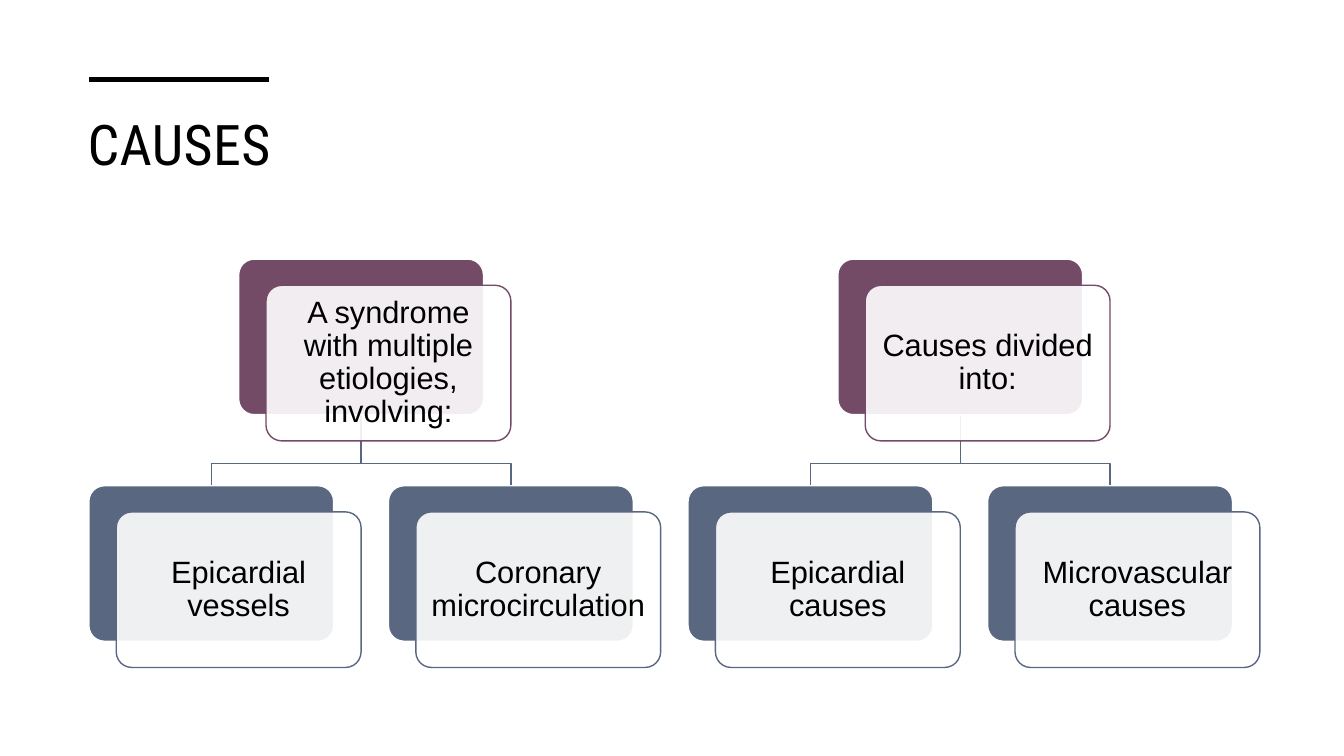
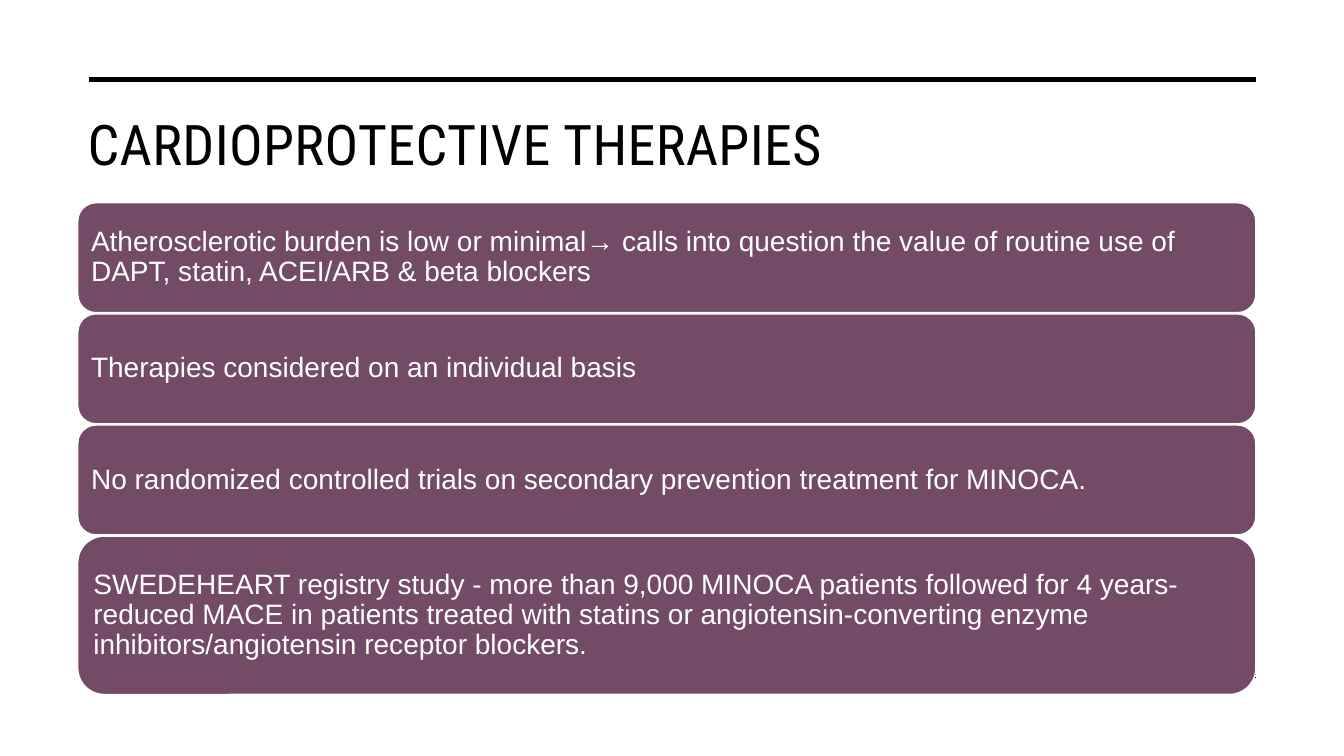
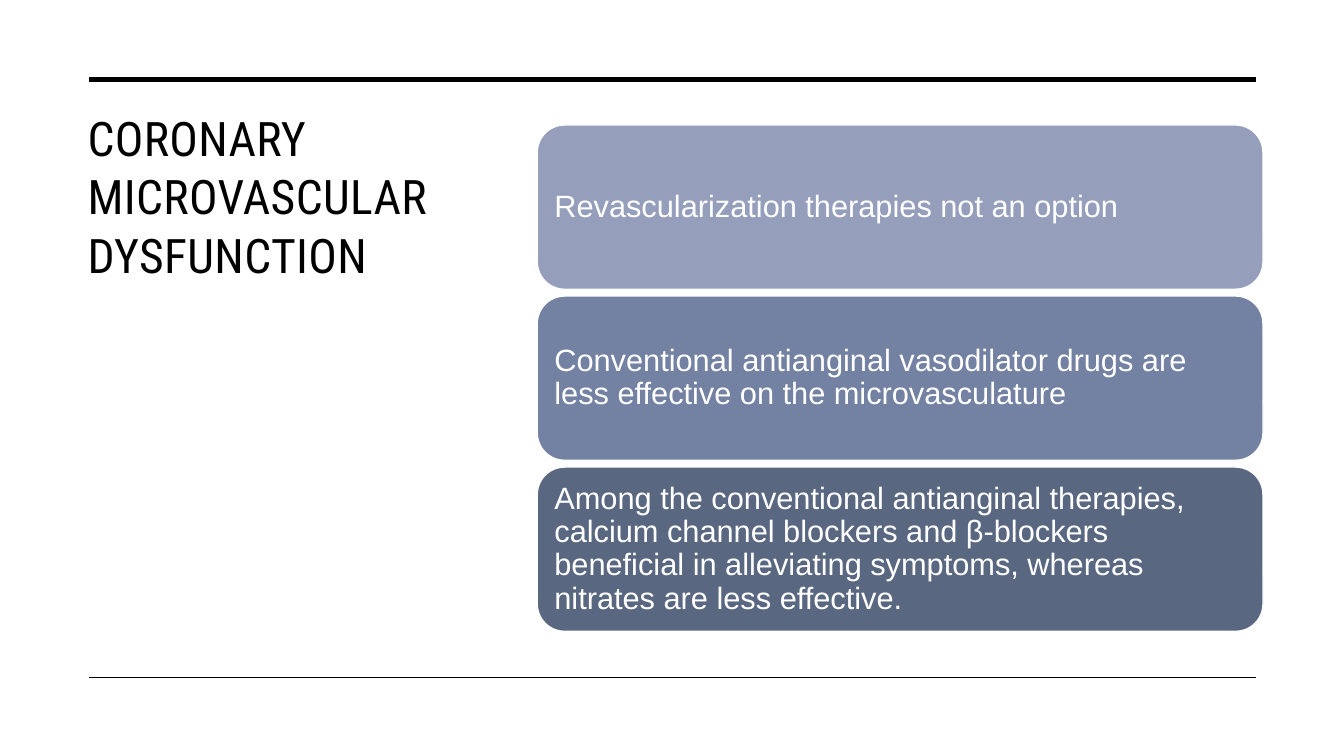
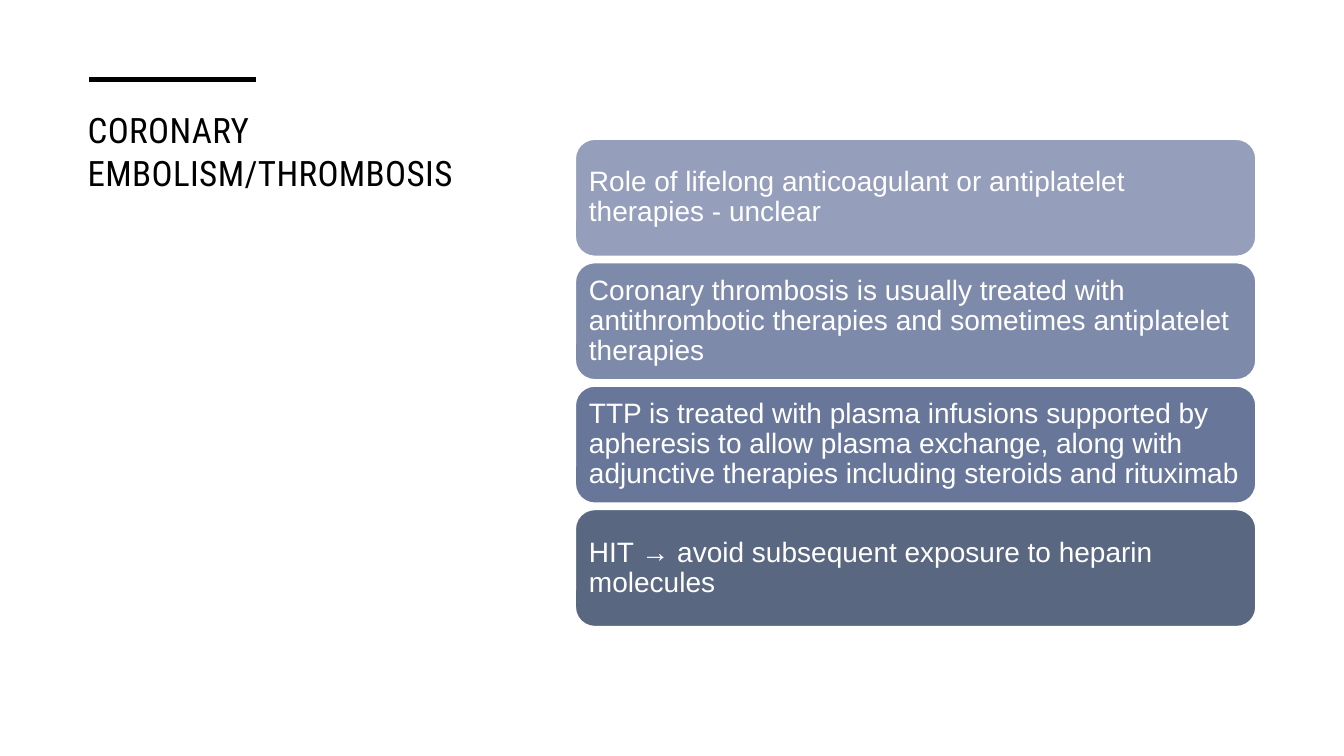
"""Build four slides on causes and therapies of MINOCA."""
from dataclasses import dataclass
from lxml import etree
from pptx import Presentation
from pptx import util as u
from pptx.dml.color import RGBColor
from pptx.enum import shapes, text
from pptx.oxml.ns import qn


@dataclass(frozen=True)
class Theme:
    ink: str = "000000"
    paper: str = "FFFFFF"
    plum: str = "734B67"
    slate: str = "596781"
    mist: str = "959EBB"
    steel: str = "7381A2"
    haze: str = "7E8AAA"
    dusk: str = "687799"
    head: str = "Roboto Condensed"
    body: str = "Arial"
    large: int = 22
    small: int = 20
    thick: float = 3.5
    thin: float = 1


T = Theme()


def write(frame, words, font, size, tone, inset, space):
    frame.word_wrap = True
    frame.margin_left = frame.margin_right = u.Cm(inset)
    frame.margin_top = frame.margin_bottom = u.Cm(inset)
    para = frame.paragraphs[0]
    para.alignment = text.PP_ALIGN.LEFT
    para.line_spacing = space
    run = para.add_run()
    run.text = words
    run.font.name = font
    run.font.size = u.Pt(size)
    run.font.color.rgb = RGBColor.from_string(tone)
    return para, run


def block(slide, left, top, wide, high, fill, edge):
    box = slide.shapes.add_shape(shapes.MSO_SHAPE.ROUNDED_RECTANGLE,
                                 u.Cm(left), u.Cm(top), u.Cm(wide), u.Cm(high))
    box.shadow.inherit = False
    box.fill.solid()
    box.fill.fore_color.rgb = RGBColor.from_string(fill)
    box.line.color.rgb = RGBColor.from_string(edge)
    box.line.width = u.Pt(T.thin)
    box.text_frame.vertical_anchor = text.MSO_ANCHOR.MIDDLE
    return box


deck = Presentation()
deck.slide_width, deck.slide_height = u.Cm(33.87), u.Cm(19.05)

edge, full = 2.24, 31.65
upper, lower = 2.01, 17.07
heads = [
    ("CAUSES", 40, 30, 6.78, False),
    ("CARDIOPROTECTIVE THERAPIES", 40, 29.69, full, True),
    ("CORONARY MICROVASCULAR DYSFUNCTION", 34, 10.16, full, True),
    ("CORONARY EMBOLISM/THROMBOSIS", 25, 10.87, 6.45, False),
]
for title, size, wide, end, foot in heads:
    slide = deck.slides.add_slide(deck.slide_layouts[6])
    rules = [(upper, end, T.thick)]
    if foot:
        rules.append((lower, full, T.thin))
    for y, stop, weight in rules:
        rule = slide.shapes.add_connector(shapes.MSO_CONNECTOR.STRAIGHT,
                                          u.Cm(edge), u.Cm(y), u.Cm(stop), u.Cm(y))
        rule.line.color.rgb = RGBColor.from_string(T.ink)
        rule.line.width = u.Pt(weight)
        etree.SubElement(rule.element.spPr, qn("a:effectLst"))
    box = slide.shapes.add_textbox(u.Cm(1.96), u.Cm(2.54), u.Cm(wide), u.Cm(3.6))
    para, run = write(box.text_frame, title, T.head, size, T.ink, 0.18, 1.02)
    box.text_frame.margin_left = box.text_frame.margin_right = u.Cm(0.25)
    run.font._element.set("spc", "30")

causes = deck.slides[0]
wide, high, pitch = 6.17, 3.92, 7.55
root, fork, leaf = 6.53, 11.68, 12.24
trees = [
    ("A syndrome with multiple etiologies, involving:",
     ["Epicardial vessels", "Coronary microcirculation"]),
    ("Causes divided into:",
     ["Epicardial causes", "Microvascular causes"]),
]
cards = []
for i, (parent, kids) in enumerate(trees):
    left = edge + 2 * i * pitch
    mid = left + pitch / 2
    cards.append((parent, mid, root, T.plum))
    for j, kid in enumerate(kids):
        side = left + j * pitch
        cards.append((kid, side, leaf, T.slate))
        stem, drop = mid + wide / 2, side + wide / 2
        path = causes.shapes.build_freeform(u.Cm(stem), u.Cm(root + high))
        path.add_line_segments([(u.Cm(stem), u.Cm(fork)), (u.Cm(drop), u.Cm(fork)),
                                (u.Cm(drop), u.Cm(leaf))], close=False)
        link = path.convert_to_shape()
        link.shadow.inherit = False
        link.fill.background()
        link.line.color.rgb = RGBColor.from_string(T.slate)
        link.line.width = u.Pt(T.thin)

for words, left, top, tone in cards:
    back = block(causes, left, top, wide, high, tone, T.paper)
    front = block(causes, left + 0.69, top + 0.66, wide, high, T.paper, tone)
    back.adjustments[0] = front.adjustments[0] = 0.1
    color = front.element.spPr.find(qn("a:solidFill"))[0]
    etree.SubElement(color, qn("a:alpha"), val="90000")
    para, run = write(front.text_frame, words, T.body, T.large, T.ink, 0.23, 0.9)
    para.alignment = text.PP_ALIGN.CENTER

stacks = [
    (1, 1.96, 5.11, 29.69, 0.03, T.small, 0.2, [
        (2.77, T.plum, "Atherosclerotic burden is low or minimal→ calls into question "
         "the value of routine use of DAPT, statin, ACEI/ARB & beta blockers"),
        (2.77, T.plum, "Therapies considered on an individual basis"),
        (2.77, T.plum, "No randomized controlled trials on secondary prevention "
         "treatment for MINOCA."),
        (3.99, T.plum, "SWEDEHEART registry study - more than 9,000 MINOCA patients "
         "followed for 4 years- reduced MACE in patients treated with statins or "
         "angiotensin-converting enzyme inhibitors/angiotensin receptor blockers."),
    ]),
    (2, 13.54, 3.15, 18.29, 0.17, T.large, 0.23, [
        (4.14, T.mist, "Revascularization therapies not an option"),
        (4.14, T.steel, "Conventional antianginal vasodilator drugs are less effective "
         "on the microvasculature"),
        (4.14, T.slate, "Among the conventional antianginal therapies, calcium channel "
         "blockers and β-blockers beneficial in alleviating symptoms, whereas nitrates "
         "are less effective."),
    ]),
    (3, 14.5, 3.51, 17.15, 0.16, T.small, 0.2, [
        (2.95, T.mist, "Role of lifelong anticoagulant or antiplatelet therapies - unclear"),
        (2.95, T.haze, "Coronary thrombosis is usually treated with antithrombotic "
         "therapies and sometimes antiplatelet therapies"),
        (2.95, T.dusk, "TTP is treated with plasma infusions supported by apheresis to "
         "allow plasma exchange, along with adjunctive therapies including steroids "
         "and rituximab"),
        (2.95, T.slate, "HIT → avoid subsequent exposure to heparin molecules"),
    ]),
]
for page, left, top, wide, gap, size, inset, bars in stacks:
    for high, tone, words in bars:
        bar = block(deck.slides[page], left, top, wide, high, tone, T.paper)
        write(bar.text_frame, words, T.body, size, T.paper, inset, 0.9)
        top += high + gap

deck.save("out.pptx")
